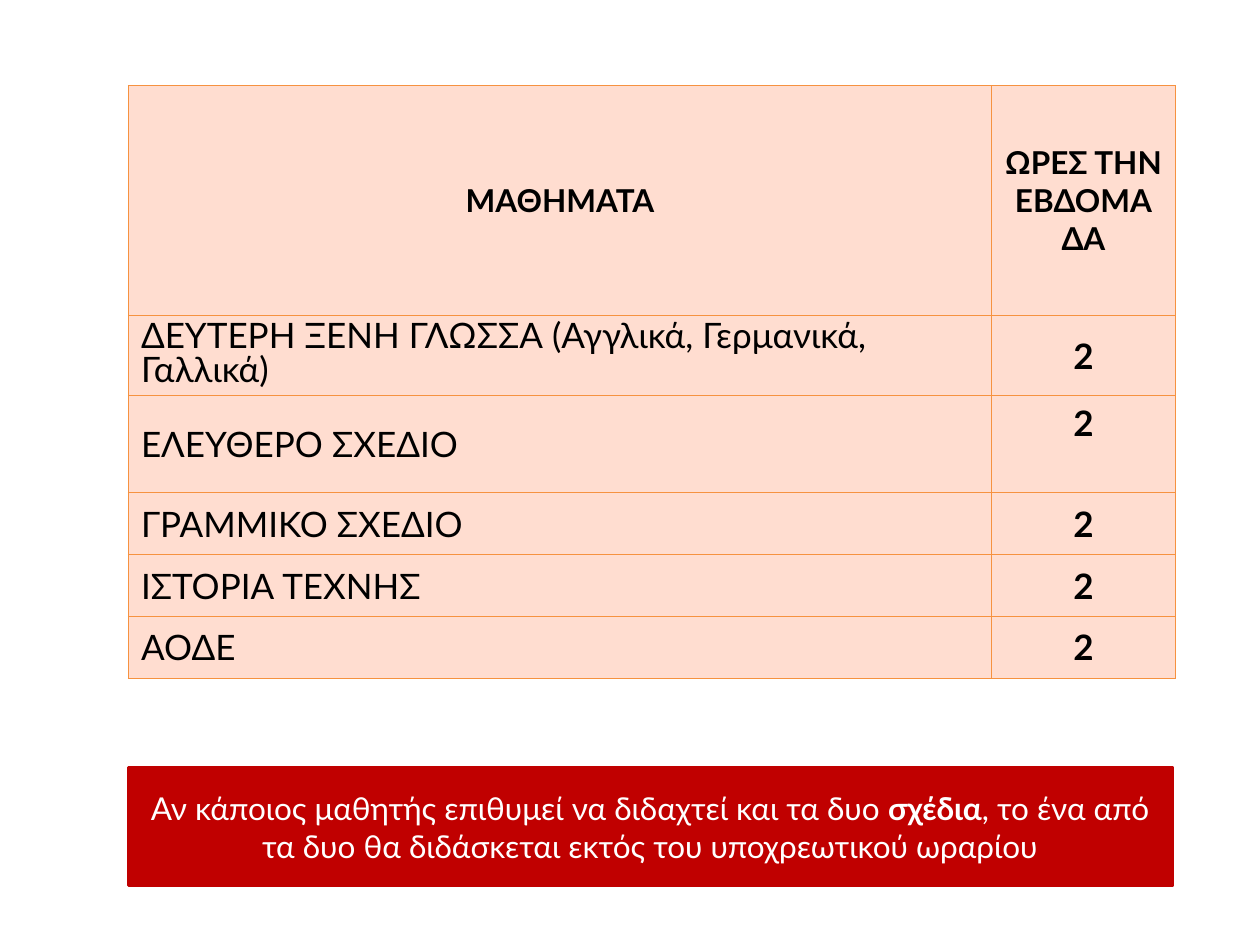
import pptx
import pptx.util
import pptx.dml.color
import pptx.enum.shapes
import pptx.enum.text
import pptx.oxml
import pptx.oxml.ns

Pt = pptx.util.Pt
RGB = pptx.dml.color.RGBColor.from_string
ALIGN = pptx.enum.text.PP_ALIGN
ANCHOR = pptx.enum.text.MSO_ANCHOR

THEME = {
    "font": "Lato", "text": "000000", "light": "FFFFFF",
    "cell": "FFDDD0", "border": "F69240", "note": "C00000",
    "small": 18, "large": 20,
}


def add_span(para, text, size, bold, color):
    span = para.add_run()
    span.text = text
    values = {"name": THEME["font"], "size": Pt(size), "bold": bold}
    for name, value in values.items():
        setattr(span.font, name, value)
    span.font.color.rgb = RGB(color)


def style_cell(cell):
    cell.fill.solid()
    cell.fill.fore_color.rgb = RGB(THEME["cell"])
    properties = cell.fill._xPr
    for index, side in enumerate(("lnL", "lnR", "lnT", "lnB")):
        properties.insert(index, pptx.oxml.parse_xml(
            f'<a:{side} {pptx.oxml.ns.nsdecls("a")} w="{Pt(0.75)}"><a:solidFill>'
            f'<a:srgbClr val="{THEME["border"]}"/></a:solidFill></a:{side}>'))


deck = pptx.Presentation()
deck.slide_width, deck.slide_height = Pt(720), Pt(540)
page = deck.slides.add_slide(deck.slide_layouts[6])

# Timetable: subject and hours per week
rows = [
    ("ΜΑΘΗΜΑΤΑ", "ΩΡΕΣ ΤΗΝ ΕΒΔΟΜΑΔΑ"),
    ("ΔΕΥΤΕΡΗ ΞΕΝΗ ΓΛΩΣΣΑ (Αγγλικά, Γερμανικά, Γαλλικά)", "2"),
    ("ΕΛΕΥΘΕΡΟ ΣΧΕΔΙΟ", "2"),
    ("ΓΡΑΜΜΙΚΟ ΣΧΕΔΙΟ", "2"),
    ("ΙΣΤΟΡΙΑ ΤΕΧΝΗΣ", "2"),
    ("ΑΟΔΕ", "2"),
]
widths = [493.2, 105.1]
heights = [131.2, 45.7, 55.6, 35.3, 35.3, 35.3]
table = page.shapes.add_table(
    len(rows), len(widths), Pt(73.4), Pt(49),
    Pt(sum(widths)), Pt(sum(heights))).table
for column, width in zip(table.columns, widths):
    column.width = Pt(width)
for row, height in zip(table.rows, heights):
    row.height = Pt(height)

for row_index, texts in enumerate(rows):
    header = row_index == 0
    for column_index, text in enumerate(texts):
        hours = column_index == 1
        cell = table.cell(row_index, column_index)
        style_cell(cell)
        cell.vertical_anchor = ANCHOR.MIDDLE
        para = cell.text_frame.paragraphs[0]
        para.alignment = ALIGN.CENTER if header or hours else ALIGN.LEFT
        add_span(para, text, THEME["small" if header else "large"],
                 header or hours, THEME["text"])

# The language row is set tight; the free drawing hours sit at the top
table.cell(1, 0).text_frame.paragraphs[0].line_spacing = 0.8
table.cell(2, 1).vertical_anchor = ANCHOR.TOP

# Note below the table
note = page.shapes.add_shape(
    pptx.enum.shapes.MSO_SHAPE.RECTANGLE, Pt(73.4), Pt(438.5), Pt(596.2), Pt(67.7))
note.shadow.inherit = False
note.fill.solid()
note.fill.fore_color.rgb = RGB(THEME["note"])
note.line.color.rgb = RGB(THEME["note"])
note.line.width = Pt(2)
note.text_frame.word_wrap = True
note.text_frame.vertical_anchor = ANCHOR.MIDDLE
para = note.text_frame.paragraphs[0]
para.alignment = ALIGN.CENTER
for text, bold in [
    ("Αν κάποιος μαθητής επιθυμεί να διδαχτεί και τα δυο ", False),
    ("σχέδια", True),
    (", το ένα από τα δυο θα διδάσκεται εκτός του υποχρεωτικού ωραρίου", False),
]:
    add_span(para, text, THEME["small"], bold, THEME["light"])

deck.save("out.pptx")
